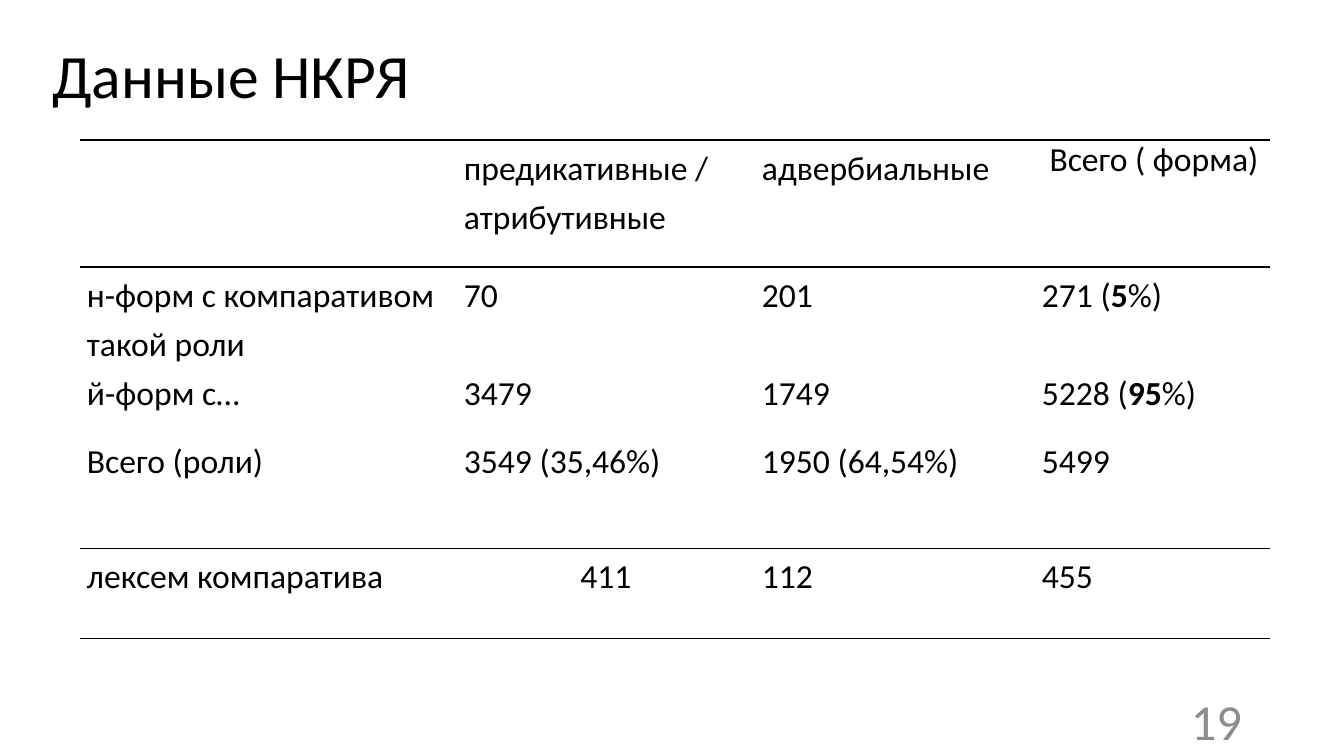
from dataclasses import dataclass

from lxml.etree import SubElement
from pptx import Presentation
from pptx.dml.color import RGBColor
from pptx.enum.text import MSO_ANCHOR as Anchor, MSO_AUTO_SIZE as AutoSize, PP_ALIGN as Align
from pptx.oxml.ns import qn
from pptx.util import Pt

EMU_PER_PX = 914400 / 100.8


def px(n):
    return round(n * EMU_PER_PX)


@dataclass(frozen=True)
class Theme:
    font: str = "Calibri"
    ink: str = "000000"
    muted: str = "8C8C8C"
    title: int = 44
    body: int = 24
    number: int = 36
    rule: int = 1


class Deck:
    def __init__(self, theme):
        self.theme = theme
        self.prs = Presentation()
        self.prs.slide_width, self.prs.slide_height = px(1344), px(756)
        self.s = None

    def add_slide(self):
        self.s = self.prs.slides.add_slide(self.prs.slide_layouts[5])

    def style(self, p, size, color, align=Align.LEFT, spacing=None):
        p.alignment = align
        p.line_spacing = spacing
        for r in p.runs:
            r.font.name = self.theme.font
            r.font.size = Pt(size)
            r.font.color.rgb = RGBColor.from_string(color)

    def title(self, text, x, y, w, h):
        sp = self.s.shapes.title
        sp.left, sp.top, sp.width, sp.height = px(x), px(y), px(w), px(h)
        tf = sp.text_frame
        tf.text = text
        tf.auto_size = AutoSize.NONE
        tf.vertical_anchor = Anchor.MIDDLE
        self.style(tf.paragraphs[0], self.theme.title, self.theme.ink, spacing=0.9)

    def page_number(self, text, x, y, w, h):
        tf = self.s.shapes.add_textbox(px(x), px(y), px(w), px(h)).text_frame
        tf.text = text
        tf.word_wrap = True
        tf.vertical_anchor = Anchor.MIDDLE
        self.style(tf.paragraphs[0], self.theme.number, self.theme.muted, Align.RIGHT)

    def borders(self, cell, ruled_sides):
        tcPr = cell._tc.get_or_add_tcPr()
        for side in "LRTB":
            ln = SubElement(tcPr, qn(f"a:ln{side}"), w=str(Pt(self.theme.rule)))
            if side in ruled_sides:
                fill = SubElement(ln, qn("a:solidFill"))
                SubElement(fill, qn("a:srgbClr"), val=self.theme.ink)
            else:
                SubElement(ln, qn("a:noFill"))

    def cell(self, cell, content, ruled_sides, align, spacing):
        cell.margin_left = cell.margin_right = px(7)
        cell.margin_top = cell.margin_bottom = 0
        cell.vertical_anchor = Anchor.TOP
        self.borders(cell, ruled_sides)
        cell.fill.background()
        p = cell.text_frame.paragraphs[0]
        if isinstance(content, tuple):
            for i, part in enumerate(content):
                r = p.add_run()
                r.text = part
                r.font.bold = i == 1
        else:
            p.text = content
        self.style(p, self.theme.body, self.theme.ink, align, spacing)

    def table(self, rows, x, y, widths, heights, ruled_rows, centered, single_spaced):
        frame = self.s.shapes.add_table(
            len(rows), len(widths), px(x), px(y), px(sum(widths)), px(sum(heights)))
        tbl = frame.table
        tbl.first_row = tbl.horz_banding = False
        for col, w in zip(tbl.columns, widths):
            col.width = px(w)
        for i, (row, h) in enumerate(zip(rows, heights)):
            tbl.rows[i].height = px(h)
            top = "T" if i == 0 or i - 1 in ruled_rows else ""
            bottom = "B" if i in ruled_rows else ""
            for j, content in enumerate(row):
                align = Align.CENTER if (i, j) in centered else Align.LEFT
                spacing = 1.0 if (i, j) in single_spaced else 1.2
                self.cell(tbl.cell(i, j), content, top + bottom, align, spacing)


ROWS = [
    ["", "предикативные / атрибутивные", "адвербиальные", " Всего ( форма)"],
    ["н-форм с компаративом такой роли", "70", "201", ("271 (", "5", "%)")],
    ["й-форм с…", "3479", "1749", ("5228 (", "95", "%)")],
    ["Всего (роли)", "3549 (35,46%)", "1950 (64,54%)", "5499"],
    ["лексем компаратива", "411", "112", "455"],
]


def main():
    deck = Deck(Theme())
    deck.add_slide()
    deck.title("Данные НКРЯ", 42, 35, 1268, 87)
    deck.table(ROWS, 80, 140, widths=[377, 298, 280, 235], heights=[127, 74, 68, 115, 90],
               ruled_rows={0, 3, 4}, centered={(4, 1)}, single_spaced={(0, 3)})
    deck.page_number("19", 950, 700, 302, 40)
    deck.prs.save("out.pptx")


if __name__ == "__main__":
    main()
